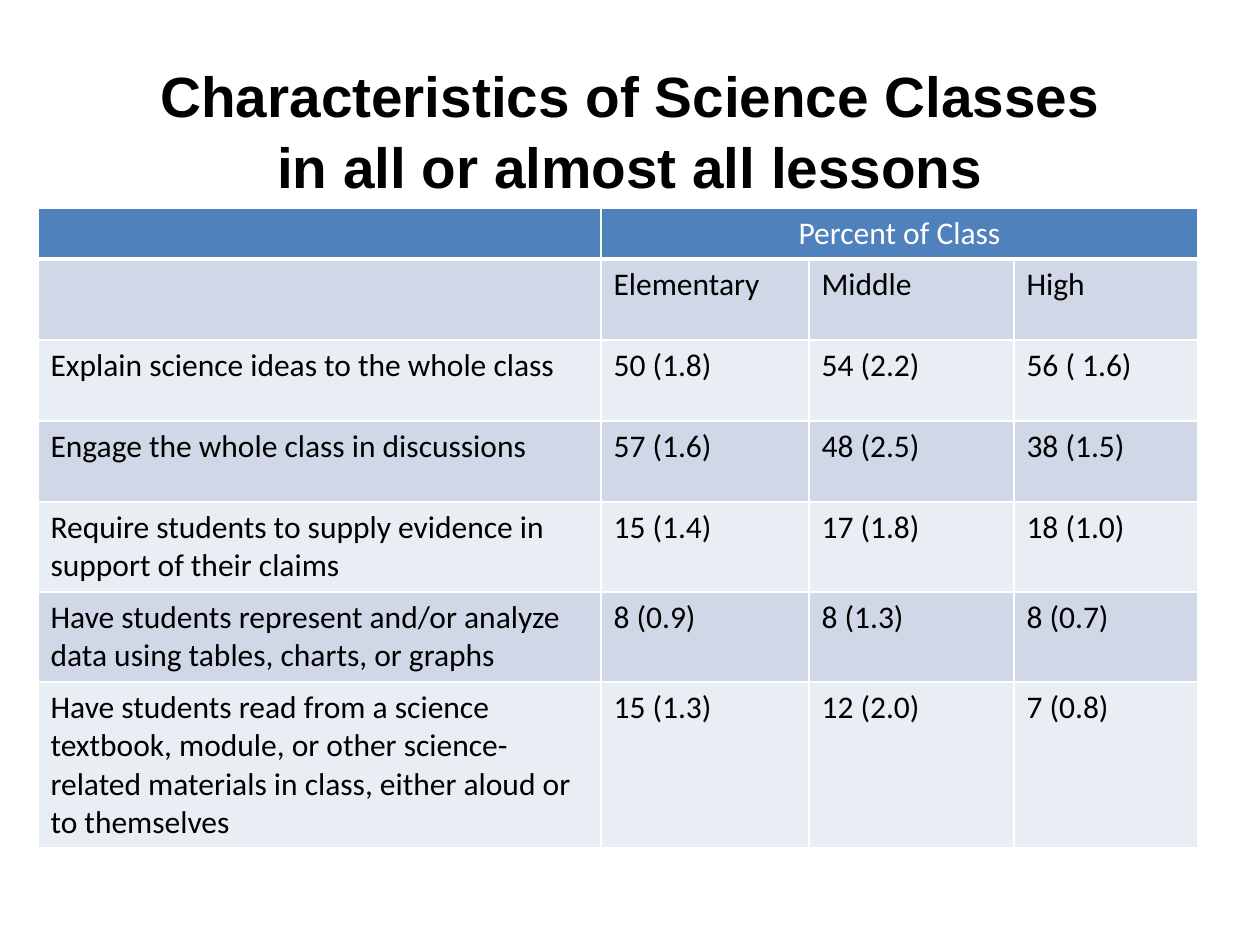
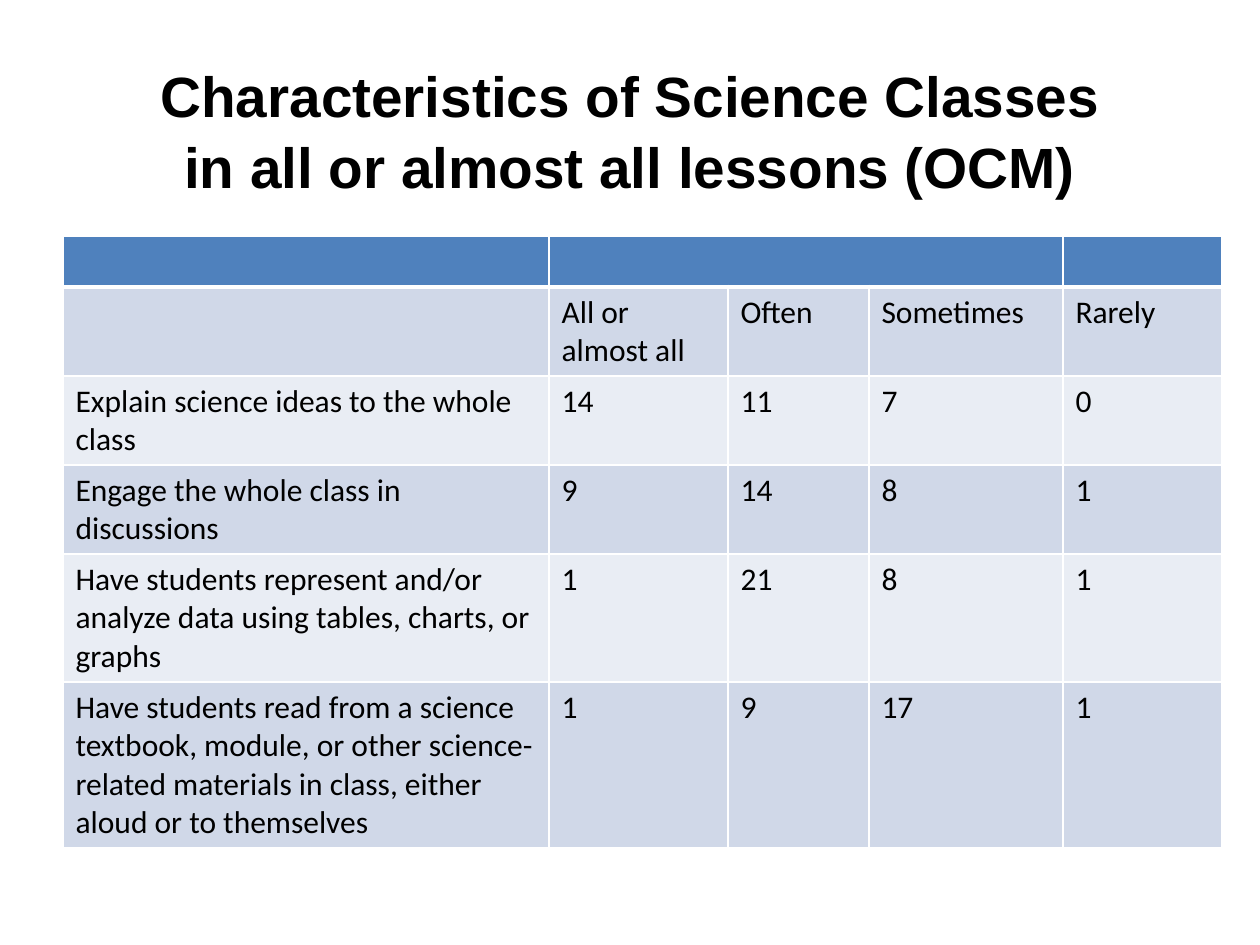
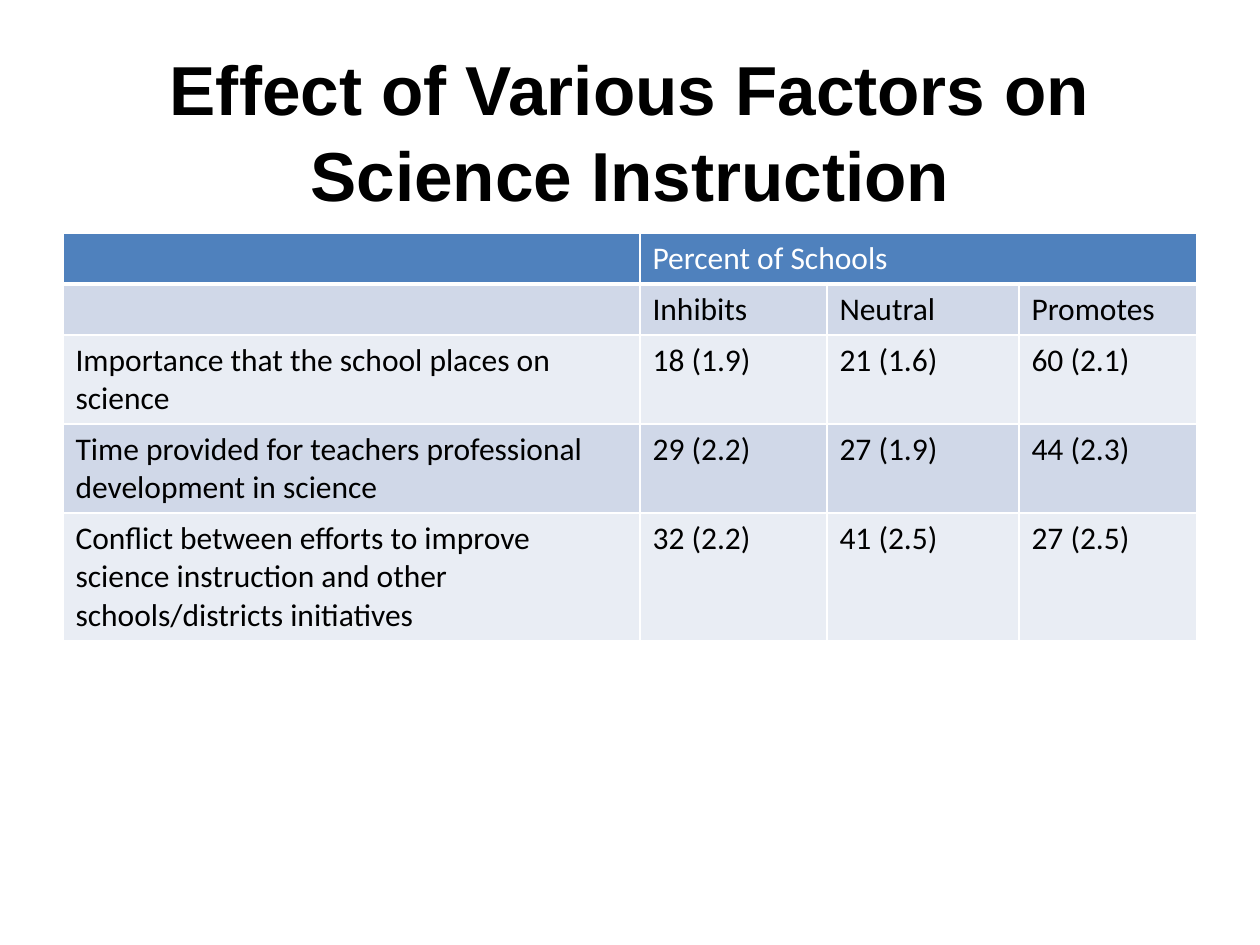
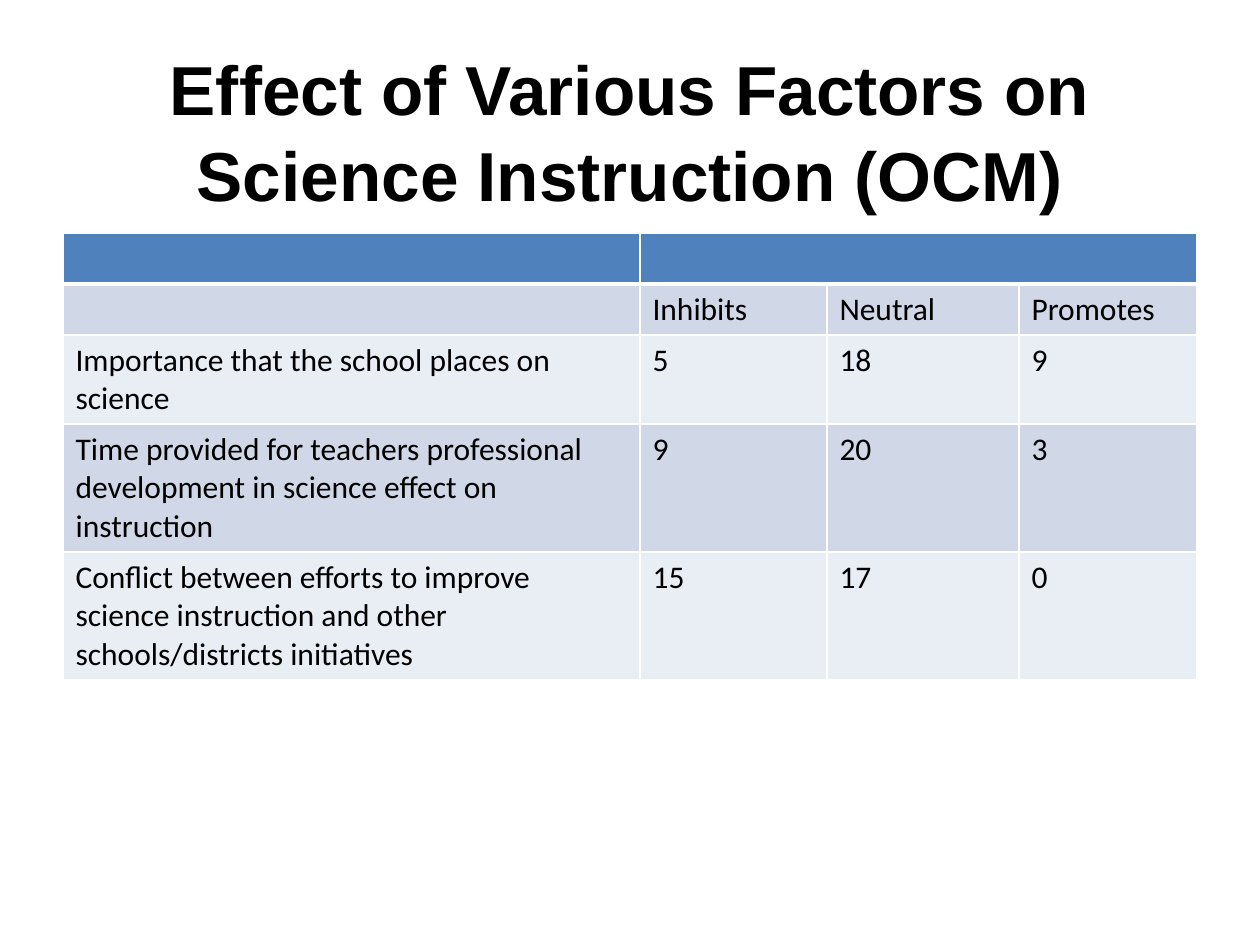
"""Build four slides of survey tables on science classes."""
import pptx
import pptx.dml.color
import pptx.enum.text
import pptx.oxml
import pptx.oxml.ns
import pptx.util

HUES = {"ink": "000000", "paper": "FFFFFF", "head": "4F81BD",
        "dark": "D0D8E8", "light": "E9EDF4"}
SCALE = 914400 / 126
SIZE = 1260, 945
TITLE = 63, 50, 1134, 158
ALIGN = pptx.enum.text.PP_ALIGN

EXPLAIN = "Explain science ideas to the whole class"
ENGAGE = "Engage the whole class in discussions"
GRAPHS = "Have students represent and/or analyze data using tables, charts, or graphs"
READ = ("Have students read from a science textbook, module, or other "
        "science-related materials in class, either aloud or to themselves")
WORTH = "Importance that the school places on science"
TIME = "Time provided for teachers professional development in science"
CLASH = ("Conflict between efforts to improve science instruction "
         "and other schools/districts initiatives")
CLASSES = "Characteristics of Science Classes"
LESSONS = "in all or almost all lessons"
FACTORS = "Effect of Various Factors on Science Instruction"
LEVELS = ["", "Inhibits", "Neutral", "Promotes"]
WIDE = [577, 187, 192, 178]

SLIDES = [
    {"title": [CLASSES, LESSONS], "size": 32.4, "at": (38, 208), "align": ALIGN.CENTER,
     "cols": [563, 208, 205, 184], "rows": [51, 81, 81, 81, 90, 90, 166],
     "cells": [
         ["", "Percent of Class", "", ""],
         ["", "Elementary", "Middle", "High"],
         [EXPLAIN, "50 (1.8)", "54 (2.2)", "56 ( 1.6)"],
         [ENGAGE, "57 (1.6)", "48 (2.5)", "38 (1.5)"],
         ["Require students to supply evidence in support of their claims",
          "15 (1.4)", "17 (1.8)", "18 (1.0)"],
         [GRAPHS, "8 (0.9)", "8 (1.3)", "8 (0.7)"],
         [READ, "15 (1.3)", "12 (2.0)", "7 (0.8)"]]},
    {"title": [CLASSES, LESSONS + " (OCM)"], "size": 32.4, "at": (63, 236), "align": ALIGN.LEFT,
     "cols": [486, 179, 141, 194, 159], "rows": [51, 89, 89, 89, 128, 166],
     "cells": [
         ["", "", "", "", ""],
         ["", "All or almost all", "Often", "Sometimes", "Rarely"],
         [EXPLAIN, "14", "11", "7", "0"],
         [ENGAGE, "9", "14", "8", "1"],
         [GRAPHS, "1", "21", "8", "1"],
         [READ, "1", "9", "17", "1"]]},
    {"title": [FACTORS], "size": 39.6, "at": (63, 233), "align": ALIGN.LEFT,
     "cols": WIDE, "rows": [51, 51, 89, 89, 128],
     "cells": [
         ["", "Percent of Schools", "", ""],
         LEVELS,
         [WORTH, "18 (1.9)", "21 (1.6)", "60 (2.1)"],
         [TIME, "29 (2.2)", "27 (1.9)", "44 (2.3)"],
         [CLASH, "32 (2.2)", "41 (2.5)", "27 (2.5)"]]},
    {"title": [FACTORS + " (OCM)"], "size": 39.6, "at": (63, 233), "align": ALIGN.LEFT,
     "cols": WIDE, "rows": [51, 51, 89, 128, 128],
     "cells": [
         ["", "", "", ""],
         LEVELS,
         [WORTH, "5", "18", "9"],
         [TIME + " effect on instruction", "9", "20", "3"],
         [CLASH, "15", "17", "0"]]},
]


def px(*nums):
    return [pptx.util.Emu(round(n * SCALE)) for n in nums]


def rgb(hue):
    return pptx.dml.color.RGBColor.from_string(HUES[hue])


def write(para, text, face, size, hue, bold):
    run = para.add_run()
    run.text = text
    font = run.font
    font.name, font.size, font.bold = face, pptx.util.Pt(size), bold
    font.color.rgb = rgb(hue)


def title(slide, lines, size):
    frame = slide.shapes.add_textbox(*px(*TITLE)).text_frame
    frame.word_wrap = True
    frame.vertical_anchor = pptx.enum.text.MSO_ANCHOR.MIDDLE
    para = frame.paragraphs[0]
    para.alignment = ALIGN.CENTER
    para.line_spacing = 1.04
    for num, line in enumerate(lines):
        if num:
            para.add_line_break()
        write(para, line, "Arial", size, "ink", True)


def edge(cell, head):
    props = cell._tc.get_or_add_tcPr()
    for num, side in enumerate("LRTB"):
        width = pptx.util.Pt(3 if head and side == "B" else 1)
        props.insert(num, pptx.oxml.parse_xml(
            f'<a:ln{side} {pptx.oxml.ns.nsdecls("a")} w="{width}"><a:solidFill>'
            f'<a:srgbClr val="{HUES["paper"]}"/></a:solidFill></a:ln{side}>'))


def grid(slide, data):
    cols, rows = data["cols"], data["rows"]
    box = px(*data["at"], sum(cols), sum(rows))
    table = slide.shapes.add_table(len(rows), len(cols), *box).table
    for col, width in zip(table.columns, px(*cols)):
        col.width = width
    for row, height in zip(table.rows, px(*rows)):
        row.height = height
    for r, texts in enumerate(data["cells"]):
        head = r == 0
        fill = "head" if head else "dark" if r % 2 else "light"
        for c, text in enumerate(texts):
            cell = table.cell(r, c)
            cell.fill.solid()
            cell.fill.fore_color.rgb = rgb(fill)
            edge(cell, head)
            if text:
                para = cell.text_frame.paragraphs[0]
                para.alignment = data["align"] if head else ALIGN.LEFT
                write(para, text, "Calibri", 18, "paper" if head else "ink", False)
    table.cell(0, 1).merge(table.cell(0, 3))


def main():
    deck = pptx.Presentation()
    deck.slide_width, deck.slide_height = px(*SIZE)
    for data in SLIDES:
        slide = deck.slides.add_slide(deck.slide_layouts[6])
        title(slide, data["title"], data["size"])
        grid(slide, data)
    deck.save("out.pptx")


if __name__ == "__main__":
    main()
